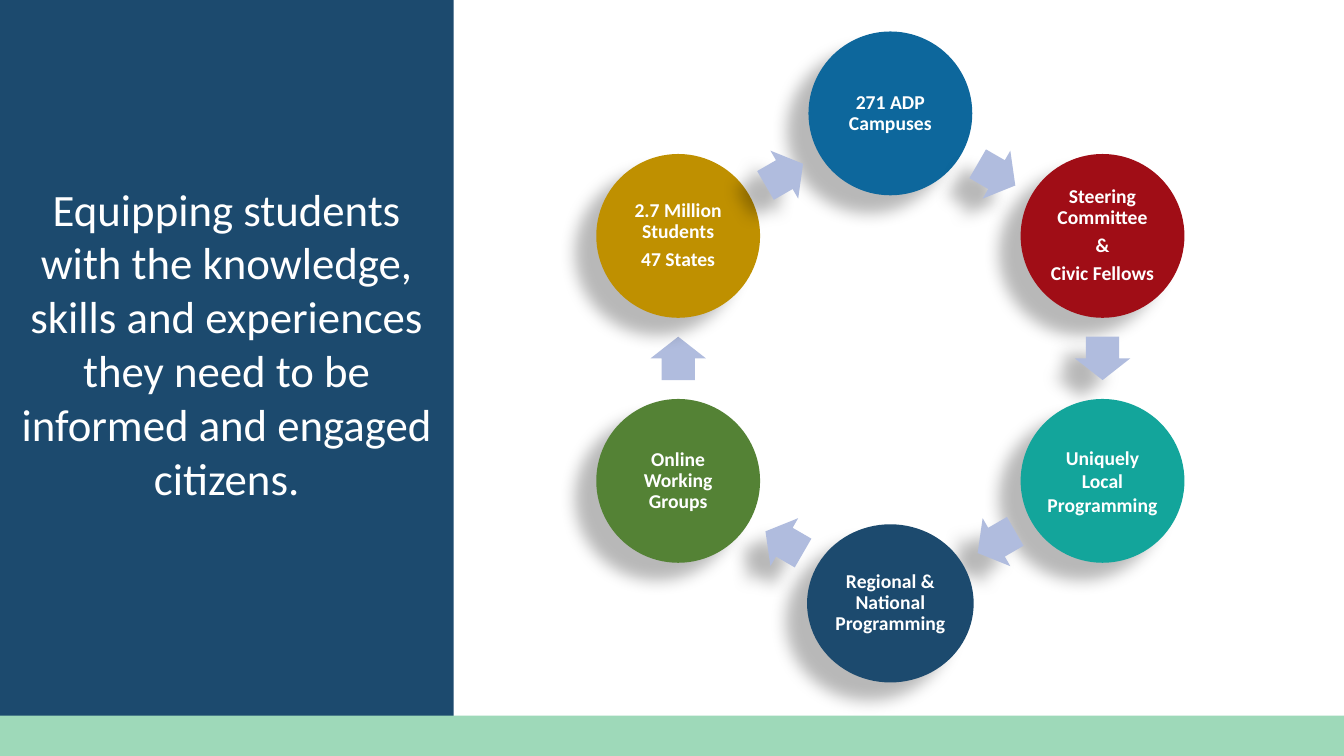
from math import cos, radians, sin

from lxml.etree import SubElement
from pptx import Presentation
from pptx.dml.color import RGBColor
from pptx.enum.shapes import MSO_SHAPE
from pptx.enum.text import MSO_ANCHOR, PP_ALIGN
from pptx.oxml.ns import qn
from pptx.util import Pt

WIDTH, HEIGHT = 960, 540
PANEL_WIDTH = 324
BAND_HEIGHT = 28.8
NAVY, MINT, LAVENDER, WHITE = "1C4A6E", "9ED9B9", "B0BCDE", "FFFFFF"

RING_X, RING_Y, RING_RADIUS = 636, 256, 175
ARROW_RADIUS = RING_RADIUS * cos(radians(30))
ARROW_SIZE = (31, 39.6)
CIRCLE_SIZE = (117, 117)
BOTTOM_SIZE = (119, 113)

MISSION = ("Equipping students with the knowledge, skills and experiences "
           "they need to be informed and engaged citizens.")

# Clockwise from the top: fill, paragraphs, size, line spacing, space after
STAGES = [
    ("0D679C", ["271 ADP Campuses"], CIRCLE_SIZE, 0.9, 4.9),
    ("A00D16", ["Steering Committee", "&", "Civic Fellows"], CIRCLE_SIZE, 0.9, 4.9),
    ("13A59B", ["Uniquely", "Local Programming"], CIRCLE_SIZE, 1, 0),
    (NAVY, ["Regional & National Programming"], BOTTOM_SIZE, 0.9, 4.9),
    ("548235", ["Online Working Groups"], CIRCLE_SIZE, 0.9, 4.9),
    ("BF9000", ["2.7 Million Students", "47 States"], CIRCLE_SIZE, 0.9, 4.9),
]
FLAT_ARROW = 4


def color(value):
    return RGBColor.from_string(value)


def add_filled_shape(slide, kind, left, top, width, height, fill):
    shape = slide.shapes.add_shape(kind, Pt(left), Pt(top), Pt(width), Pt(height))
    shape.shadow.inherit = False
    shape.fill.solid()
    shape.fill.fore_color.rgb = color(fill)
    shape.line.fill.background()
    return shape


def add_on_ring(slide, kind, radius, angle, size, fill):
    """Centre a shape on the ring; the angle runs clockwise from the right."""
    width, height = size
    left = RING_X + radius * cos(radians(angle)) - width / 2
    top = RING_Y + radius * sin(radians(angle)) - height / 2
    return add_filled_shape(slide, kind, left, top, width, height, fill)


def add_shadow(shape):
    """Soft shadow to the lower left that does not turn with the shape."""
    effects = shape._element.spPr.find(qn("a:effectLst"))
    shadow = SubElement(effects, qn("a:outerShdw"), blurRad=str(Pt(11.8)),
                        dist=str(Pt(19.7)), dir=str(141 * 60000), rotWithShape="0")
    shadow_color = SubElement(shadow, qn("a:srgbClr"), val="000000")
    SubElement(shadow_color, qn("a:alpha"), val="28000")


def add_run(paragraph, text, size, bold=False):
    paragraph.alignment = PP_ALIGN.CENTER
    run = paragraph.add_run()
    run.text = text
    run.font.name = "Calibri"
    run.font.size = Pt(size)
    run.font.bold = bold
    run.font.color.rgb = color(WHITE)


def add_stage(slide, angle, fill, texts, size, line_spacing, space_after):
    circle = add_on_ring(slide, MSO_SHAPE.OVAL, RING_RADIUS, angle, size, fill)
    add_shadow(circle)
    frame = circle.text_frame
    frame.word_wrap = True
    frame.vertical_anchor = MSO_ANCHOR.MIDDLE
    frame.margin_left = frame.margin_right = Pt(1.4)
    frame.margin_top = frame.margin_bottom = Pt(1.4)
    for index, text in enumerate(texts):
        paragraph = frame.add_paragraph() if index else frame.paragraphs[0]
        paragraph.line_spacing = line_spacing
        paragraph.space_after = Pt(space_after)
        add_run(paragraph, text, 14, bold=True)


def add_arrow(slide, angle, has_shadow):
    arrow = add_on_ring(slide, MSO_SHAPE.RIGHT_ARROW, ARROW_RADIUS, angle,
                        ARROW_SIZE, LAVENDER)
    arrow.adjustments[0] = 0.6
    arrow.adjustments[1] = 0.5
    arrow.rotation = (angle + 90) % 360
    if has_shadow:
        add_shadow(arrow)


def add_mission(slide):
    box = slide.shapes.add_textbox(Pt(0), Pt(126), Pt(PANEL_WIDTH), Pt(240))
    box.text_frame.word_wrap = True
    add_run(box.text_frame.paragraphs[0], MISSION, 32)


def main():
    presentation = Presentation()
    presentation.slide_width = Pt(WIDTH)
    presentation.slide_height = Pt(HEIGHT)
    slide = presentation.slides.add_slide(presentation.slide_layouts[6])

    add_filled_shape(slide, MSO_SHAPE.RECTANGLE, 0, 0, PANEL_WIDTH, HEIGHT, NAVY)
    step = 360 / len(STAGES)
    for index, stage in enumerate(STAGES):
        angle = -90 + index * step
        add_stage(slide, angle, *stage)
        add_arrow(slide, angle + step / 2, index != FLAT_ARROW)
    add_filled_shape(slide, MSO_SHAPE.RECTANGLE, 0, HEIGHT - BAND_HEIGHT,
                     WIDTH, BAND_HEIGHT, MINT)
    add_mission(slide)

    presentation.save("out.pptx")


if __name__ == "__main__":
    main()
